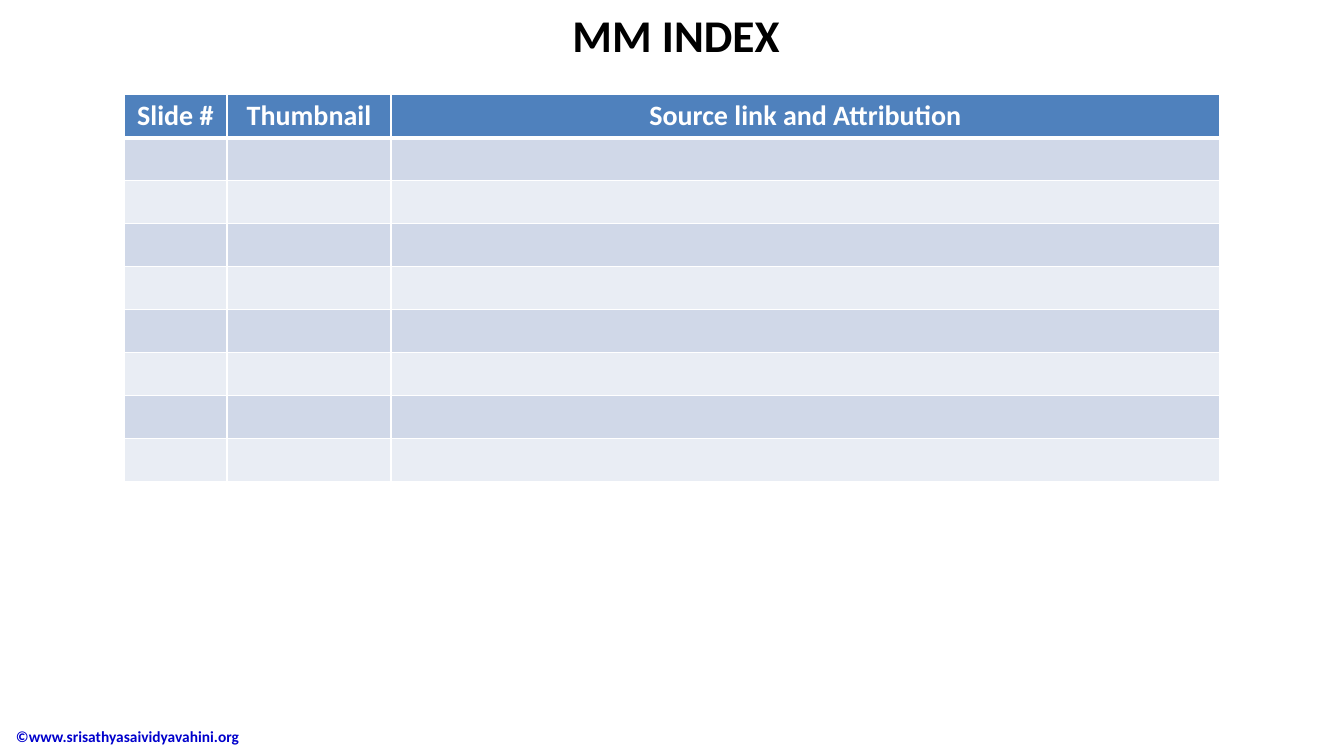
from lxml import etree
from pptx import Presentation
from pptx import util as u
from pptx.dml.color import RGBColor
from pptx.enum import text
from pptx.oxml.ns import qn

EMU_PER_PX = 914400 / 100.8
HEADINGS = ["Slide #", "Thumbnail", "Source link and Attribution"]
COLUMN_WIDTHS = [103, 164, 829]
ROW_COUNT = 9
ROW_HEIGHT = 43


def px(length):
    return u.Emu(round(length * EMU_PER_PX))


def color(value):
    return RGBColor.from_string(value)


class IndexSlide:
    font = "Calibri"
    white = "FFFFFF"
    header_fill = "4F81BD"
    band_fills = ["E9EDF4", "D0D8E8"]

    def __init__(self, presentation):
        self.slide = presentation.slides.add_slide(presentation.slide_layouts[6])

    def add_words(self, paragraph, words, size, ink, alignment):
        paragraph.alignment = alignment
        run = paragraph.add_run()
        run.text = words
        run.font.name = self.font
        run.font.size = u.Pt(size)
        run.font.bold = True
        run.font.color.rgb = color(ink)

    def text_box(self, box, words, size, ink, alignment, anchor, top_inset=5, indent=0):
        shape = self.slide.shapes.add_textbox(*map(px, box))
        frame = shape.text_frame
        frame.word_wrap = True
        frame.vertical_anchor = anchor
        frame.margin_top = px(top_inset)
        paragraph = frame.paragraphs[0]
        if indent:
            paragraph._p.get_or_add_pPr().set("marL", str(px(indent)))
        self.add_words(paragraph, words, size, ink, alignment)

    def border(self, cell, side, points):
        properties = cell._tc.get_or_add_tcPr()
        line = etree.SubElement(properties, qn(f"a:ln{side}"), w=str(u.Pt(points)))
        fill = etree.SubElement(line, qn("a:solidFill"))
        etree.SubElement(fill, qn("a:srgbClr"), val=self.white)

    def fill_cell(self, cell, row):
        thick_side = {0: "B", 1: "T"}.get(row)
        for side in "LRTB":
            self.border(cell, side, 3 if side == thick_side else 1)
        cell.fill.solid()
        cell.fill.fore_color.rgb = color(self.band_fills[row % 2] if row else self.header_fill)

    def table(self, left, top, headings, widths, row_count, row_height):
        box = (left, top, sum(widths), row_count * row_height)
        frame = self.slide.shapes.add_table(row_count, len(widths), *map(px, box))
        table = frame.table
        table.horz_banding = False
        for column, width in zip(table.columns, widths):
            column.width = px(width)
        for row_index, row in enumerate(table.rows):
            row.height = px(row_height)
            for cell in row.cells:
                self.fill_cell(cell, row_index)
        for cell, heading in zip(table.rows[0].cells, headings):
            self.add_words(cell.text_frame.paragraphs[0], heading, 20, self.white,
                           text.PP_ALIGN.CENTER)


def main():
    presentation = Presentation()
    presentation.slide_width = px(1344)
    presentation.slide_height = px(756)
    index = IndexSlide(presentation)
    index.text_box((-44, 716, 406, 41), "©www.srisathyasaividyavahini.org", 11, "0000CC",
                   text.PP_ALIGN.LEFT, text.MSO_ANCHOR.MIDDLE, indent=50)
    index.text_box((105, 0, 1142, 55), "MM INDEX", 32.4, "000000",
                   text.PP_ALIGN.CENTER, text.MSO_ANCHOR.TOP, top_inset=7)
    index.table(124, 94, HEADINGS, COLUMN_WIDTHS, ROW_COUNT, ROW_HEIGHT)
    presentation.save("out.pptx")


if __name__ == "__main__":
    main()
